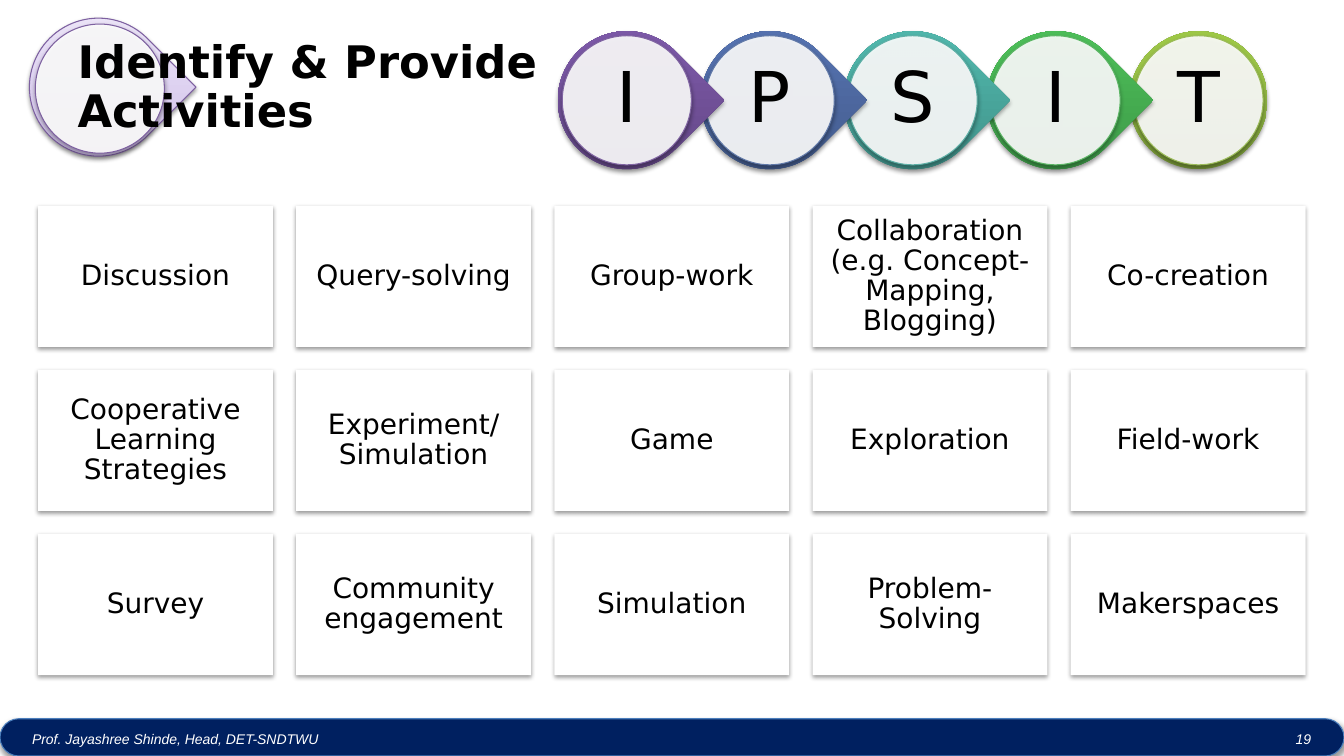
from lxml.etree import SubElement
from pptx import Presentation
from pptx.dml.color import RGBColor
from pptx.enum.shapes import MSO_SHAPE as Shape
from pptx.enum.text import MSO_ANCHOR as Anchor, MSO_AUTO_SIZE as AutoSize, PP_ALIGN as Align
from pptx.oxml.ns import qn
from pptx.util import Pt

# Content
TITLE = "Identify & Provide Activities"
STEPS = [("I", "purple"), ("P", "blue"), ("S", "teal"), ("I", "green"), ("T", "lime")]
ACTIVITIES = [
    ["Discussion", "Query-solving", "Group-work",
     "Collaboration (e.g. Concept-Mapping, Blogging)", "Co-creation"],
    ["Cooperative Learning Strategies", "Experiment/ Simulation", "Game",
     "Exploration", "Field-work"],
    ["Survey", "Community engagement", "Simulation", "Problem-Solving", "Makerspaces"],
]
FOOTER = "Prof. Jayashree Shinde, Head, DET-SNDTWU"
PAGE = "19"

# Look
COLORS = {
    "white": "FFFFFF", "black": "000000", "navy": "002060", "footer_edge": "4B7EBC",
    "purple": "8064A2", "blue": "6179A8", "teal": "5EAFA6", "green": "5CB565",
    "lime": "9BBB59", "title_edge": "7D60A0",
}
GRADIENTS = {
    "purple": [(0, "5F4480"), (80, "7B58A6"), (100, "7C57A8")],
    "blue": [(0, "405786"), (80, "5471AE"), (100, "5271B0")],
    "teal": [(0, "3D8B83"), (80, "50B5AA"), (100, "4EB8AC")],
    "green": [(0, "3A9144"), (80, "4CBC58"), (100, "4ABF57")],
    "lime": [(0, "779737"), (80, "9BC348"), (100, "9DC746")],
    "title": [(0, "C9B5E8"), (35, "D8CBEE"), (100, "F0EAF9")],
}
CELL_FONT = {"name": "DejaVu Sans", "size": Pt(20)}
STEP_FONT = {"name": "DejaVu Sans", "size": Pt(50)}
TITLE_FONT = {"name": "DejaVu Sans", "size": Pt(32), "bold": True}
FOOTER_FONT = {"name": "Arial", "size": Pt(10), "italic": True}
CELL_SHADOW = {"alpha": 38, "dist": 1.6}
RING_SHADOW = {"alpha": 35, "dist": 1.8}

# Layout, in points
WIDTH, HEIGHT = 960, 540
RING, DISC = 98.6, 92.2
STEP_LEFT, STEP_TOP, STEP_PITCH = 398.4, 22.3, 102.1
CELL_LEFT, CELL_TOP, CELL_W, CELL_H = 27.2, 147, 167.8, 100.8
COLUMN_PITCH, ROW_PITCH = 184.4, 117.2

prs = Presentation()
prs.slide_width, prs.slide_height = Pt(WIDTH), Pt(HEIGHT)
slide = prs.slides.add_slide(prs.slide_layouts[5])


def rgb(name):
    return RGBColor.from_string(COLORS[name])


def add_block(kind, box, fill, shadow, edge=None):
    block = slide.shapes.add_shape(kind, *map(Pt, box))
    if fill in GRADIENTS and kind != Shape.RECTANGLE:
        block.fill.gradient()
        block.fill.gradient_angle = 90
        gradient = block.element.spPr.find(qn("a:gradFill"))
        gradient.set("rotWithShape", "0")
        stops = gradient.find(qn("a:gsLst"))
        stops.clear()
        for position, color in GRADIENTS[fill]:
            stop = SubElement(stops, qn("a:gs"), pos=str(position * 1000))
            SubElement(stop, qn("a:srgbClr"), val=color)
    else:
        block.fill.solid()
        block.fill.fore_color.rgb = rgb(fill)
    if edge:
        block.line.color.rgb = rgb(edge)
        block.line.width = Pt(0.75)
    else:
        block.line.fill.background()
    block.shadow.inherit = False
    effects = block.element.spPr.find(qn("a:effectLst"))
    outer = SubElement(effects, qn("a:outerShdw"), blurRad=str(Pt(3.1)),
                       dist=str(Pt(shadow["dist"])), dir="5400000", rotWithShape="0")
    shade = SubElement(outer, qn("a:srgbClr"), val=COLORS["black"])
    SubElement(shade, qn("a:alpha"), val=str(shadow["alpha"] * 1000))
    return block


def write(holder, text, font, color="black", align=Align.CENTER,
          anchor=Anchor.MIDDLE, inset=(5, 5), spacing=0.9):
    frame = holder.text_frame
    frame.text = text
    side, end = map(Pt, inset)
    settings = {"word_wrap": True, "auto_size": AutoSize.NONE, "vertical_anchor": anchor,
                "margin_left": side, "margin_right": side,
                "margin_top": end, "margin_bottom": end}
    for key, value in settings.items():
        setattr(frame, key, value)
    paragraph = frame.paragraphs[0]
    paragraph.alignment = align
    paragraph.line_spacing = spacing
    for key, value in font.items():
        setattr(paragraph.font, key, value)
    paragraph.font.color.rgb = rgb(color)


def add_ring(left, top, gradient, edge, shadow, outline=None, pointed=True, disc_offset=3.2):
    kind = Shape.TEAR if pointed else Shape.OVAL
    ring = add_block(kind, (left, top, RING, RING), gradient, shadow, outline)
    ring.rotation = 45 if pointed else 0
    disc = add_block(Shape.OVAL, (left + disc_offset, top + disc_offset, DISC, DISC),
                     "white", RING_SHADOW, edge)
    white = disc.element.spPr.find(qn("a:solidFill")).find(qn("a:srgbClr"))
    SubElement(white, qn("a:alpha"), val="90000")
    return disc


# Footer band
add_block(Shape.ROUNDED_RECTANGLE, (0, 513.4, WIDTH, 26.6), "navy",
          CELL_SHADOW, "footer_edge").adjustments[0] = 0.5
for text, left, width, align in [(FOOTER, 15.8, 756.7, Align.LEFT),
                                 (PAGE, 910.1, 41.8, Align.CENTER)]:
    label = slide.shapes.add_textbox(Pt(left), Pt(518.4), Pt(width), Pt(21.6))
    write(label, text, FOOTER_FONT, "white", align, Anchor.TOP, (7.2, 3.6), 1.0)

# Step chain, last step at the back
for index, (letter, color) in reversed(list(enumerate(STEPS))):
    disc = add_ring(STEP_LEFT + index * STEP_PITCH, STEP_TOP, color, color, RING_SHADOW,
                    pointed=index < len(STEPS) - 1)
    write(disc, letter, STEP_FONT, inset=(0, 0))

# Activity grid
for row, names in enumerate(ACTIVITIES):
    for column, name in enumerate(names):
        box = (CELL_LEFT + column * COLUMN_PITCH, CELL_TOP + row * ROW_PITCH, CELL_W, CELL_H)
        write(add_block(Shape.RECTANGLE, box, "white", CELL_SHADOW),
              name, CELL_FONT, inset=(6, 6))

# Title over its ring
add_ring(21, 13, "title", "title_edge", CELL_SHADOW, outline="title_edge", disc_offset=4.2)
title = slide.shapes.title
title.left, title.top, title.width, title.height = map(Pt, (50.4, 30.2, 373.7, 66.2))
write(title, TITLE, TITLE_FONT, align=Align.LEFT)
title.element.getparent().append(title.element)

prs.save("out.pptx")
